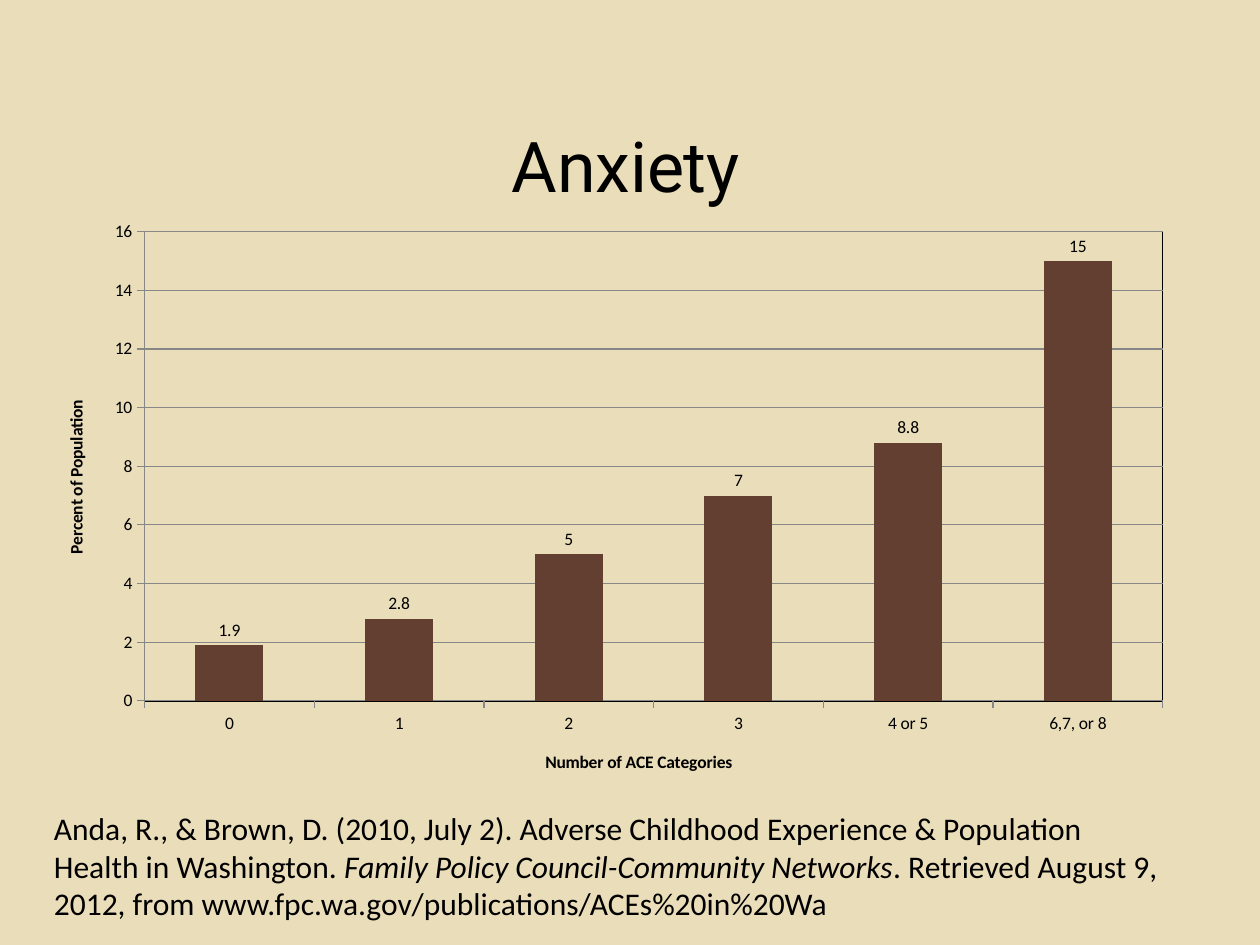
from typing import NamedTuple

from lxml import etree
from pptx import Presentation
from pptx.chart import data as cd
from pptx.dml.color import RGBColor
from pptx.enum import chart as ce
from pptx.oxml import ns
from pptx.util import Inches, Pt

SAND = RGBColor(0xEA, 0xDD, 0xBA)
BROWN = RGBColor(0x63, 0x3F, 0x32)
GRAY = RGBColor(0x87, 0x87, 0x87)
BLACK = RGBColor(0, 0, 0)
LEFT, WIDTH = Inches(0.33), Inches(9.08)


class Run(NamedTuple):
    text: str
    italic: bool = False


class Level(NamedTuple):
    category: str
    percent: float


LEVELS = [
    Level("0", 1.9),
    Level("1", 2.8),
    Level("2", 5),
    Level("3", 7),
    Level("4 or 5", 8.8),
    Level("6,7, or 8", 15),
]
CITATION = [
    Run("Anda, R., & Brown, D. (2010, July 2). Adverse Childhood Experience "
        "& Population Health in Washington.\u00a0"),
    Run("Family Policy Council-Community Networks", True),
    Run(". Retrieved August 9, 2012, from "
        "www.fpc.wa.gov/publications/ACEs%20in%20Wa"),
]


def set_font(font, **values) -> None:
    font.color.rgb = BLACK
    for name, value in values.items():
        setattr(font, name, value)


def set_title(owner, title: str, **values) -> None:
    tf = owner.text_frame
    tf.text = title
    set_font(tf.paragraphs[0].runs[0].font, **values)


def make_layout(**values) -> etree.ElementBase:
    layout = etree.Element(ns.qn("c:layout"))
    manual = etree.SubElement(layout, ns.qn("c:manualLayout"))
    for name, value in values.items():
        etree.SubElement(manual, ns.qn(f"c:{name}"), val=str(value))
    return layout


def outline_plot(plot_area) -> None:
    sp_pr = etree.SubElement(plot_area, ns.qn("c:spPr"))
    etree.SubElement(sp_pr, ns.qn("a:noFill"))
    line = etree.SubElement(sp_pr, ns.qn("a:ln"), w=str(Pt(0.75)))
    fill = etree.SubElement(line, ns.qn("a:solidFill"))
    etree.SubElement(fill, ns.qn("a:srgbClr"), val=str(BLACK))


def place_parts(chart) -> None:
    title = chart.chart_title._element
    plot_area = chart._chartSpace.chart.plotArea
    for part in (title, plot_area):
        for old in part.findall(ns.qn("c:layout")):
            part.remove(old)
    title.find(ns.qn("c:tx")).addnext(
        make_layout(xMode="edge", yMode="edge", x=0.4, y=0.06))
    plot_area.insert(0, make_layout(
        layoutTarget="inner", xMode="edge", yMode="edge",
        x=0.09, y=0.23, w=0.89, h=0.64))
    outline_plot(plot_area)


def add_anxiety_chart(s) -> None:
    data = cd.CategoryChartData()
    data.categories = [level.category for level in LEVELS]
    data.add_series("Anxiety", [level.percent for level in LEVELS])
    chart = s.shapes.add_chart(
        ce.XL_CHART_TYPE.COLUMN_CLUSTERED,
        LEFT, Inches(0.5), WIDTH, Inches(5.82), data).chart
    set_font(chart.font, name="Calibri", size=Pt(10))
    chart.has_legend = False
    set_title(chart.chart_title, "Anxiety",
              name="Roboto", size=Pt(40), bold=False)

    axes = {"Number of ACE Categories": chart.category_axis,
            "Percent of Population": chart.value_axis}
    for title, axis in axes.items():
        set_title(axis.axis_title, title,
                  name="Calibri", size=Pt(10), bold=True)
        axis.major_tick_mark = ce.XL_TICK_MARK.OUTSIDE
        axis.format.line.color.rgb = GRAY
    scale = {"minimum_scale": 0, "maximum_scale": 16, "major_unit": 2}
    for name, value in scale.items():
        setattr(chart.value_axis, name, value)
    chart.value_axis.major_gridlines.format.line.color.rgb = GRAY

    plot = chart.plots[0]
    plot.gap_width = 150
    plot.vary_by_categories = False
    bars = plot.series[0]
    bars.format.fill.solid()
    bars.format.fill.fore_color.rgb = BROWN
    labels = bars.data_labels
    labels.show_value = True
    labels.position = ce.XL_LABEL_POSITION.OUTSIDE_END
    set_font(labels.font, name="Calibri", size=Pt(10))
    place_parts(chart)


def add_citation(s) -> None:
    tf = s.shapes.add_textbox(LEFT, Inches(6.37), WIDTH, Inches(1.01)).text_frame
    tf.word_wrap = True
    p = tf.paragraphs[0]
    for run in CITATION:
        r = p.add_run()
        r.text = run.text
        set_font(r.font, name="Calibri", size=Pt(18), italic=run.italic)


def main() -> None:
    prs = Presentation()
    prs.slide_width, prs.slide_height = Inches(10), Inches(7.5)
    s = prs.slides.add_slide(prs.slide_layouts[6])
    s.background.fill.solid()
    s.background.fill.fore_color.rgb = SAND
    add_anxiety_chart(s)
    add_citation(s)
    prs.save("out.pptx")


if __name__ == "__main__":
    main()
